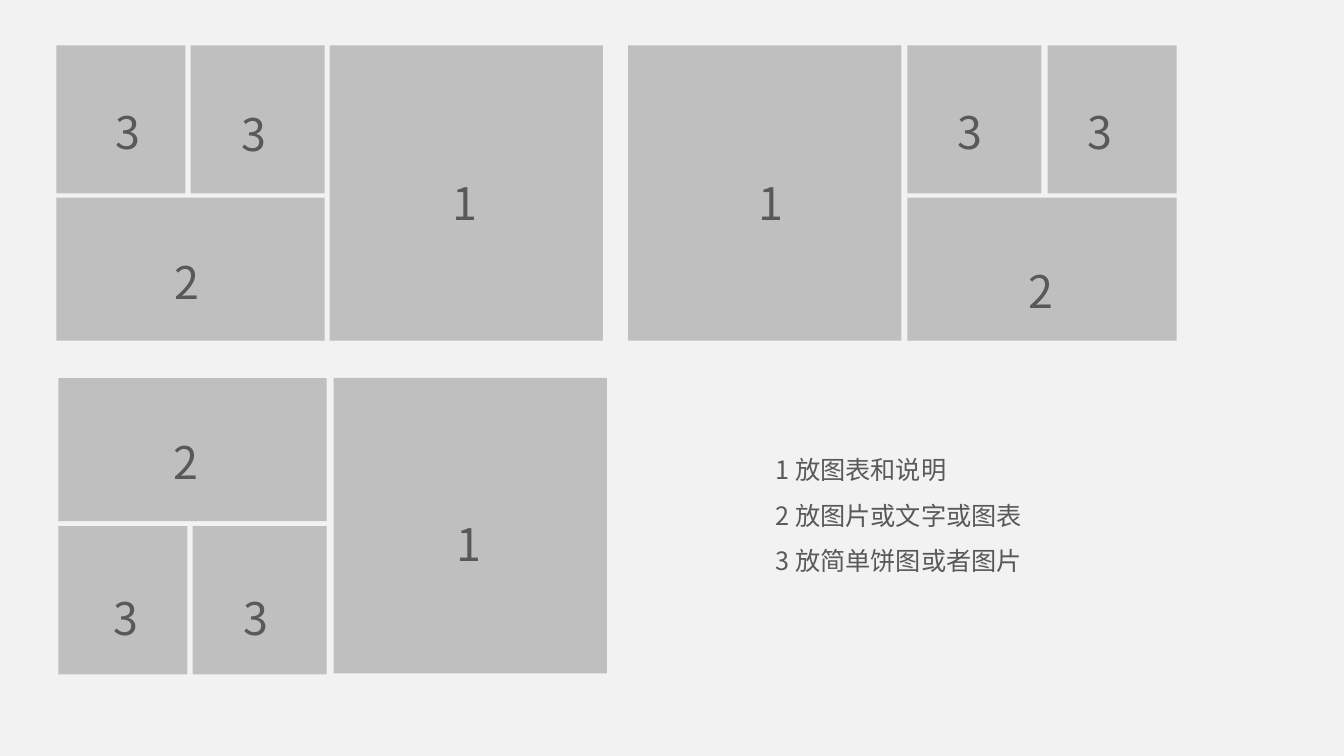
"""Build a slide showing three tile layouts and a legend for their numbers."""
import pptx
import pptx.dml.color
import pptx.enum.text
import pptx.oxml.ns
import pptx.util
from lxml import etree

PX = 9144
SLIDE_SIZE = (1333, 750)
FONT = "Noto Sans CJK SC"
BACKGROUND, TILE_FILL, TEXT_COLOUR = "F2F2F2", "BFBFBF", "595959"

BIG_WIDTH, BIG_HEIGHT = 271, 293
WIDE_HEIGHT, SMALL_HEIGHT = 142, 147
MIDDLE_WIDTH, SMALL_WIDTH = 133, 128
NUMBER_SIZE = (48, 81)

PANELS = [
    {"left": 56, "top": 45, "column_gap": 5, "small_gap": 5, "row_gap": 4,
     "big_first": False, "wide_first": False,
     "numbers": [("1", 439, 143), ("2", 163, 221), ("3", 230, 74), ("3", 105, 72)]},
    {"left": 58, "top": 375, "column_gap": 7, "small_gap": 5, "row_gap": 5,
     "big_first": False, "wide_first": True,
     "numbers": [("1", 443, 481), ("2", 162, 400), ("3", 232, 554), ("3", 103, 554)]},
    {"left": 623, "top": 45, "column_gap": 6, "small_gap": 6, "row_gap": 4,
     "big_first": True, "wide_first": False,
     "numbers": [("1", 742, 143), ("2", 1010, 230), ("3", 940, 72), ("3", 1069, 72)]},
]
LEGEND_BOX = (759, 431, 357, 146)
LEGEND = ["1 放图表和说明", "2 放图片或文字或图表", "3 放简单饼图或者图片"]


def emu(lengths):
    return [length * PX for length in lengths]


def colour(code):
    return pptx.dml.color.RGBColor.from_string(code)


def panel_tiles(panel):
    small_gap = panel["small_gap"]
    wide_width = MIDDLE_WIDTH + small_gap + SMALL_WIDTH
    big_left = wide_left = panel["left"]
    wide_top = small_top = panel["top"]
    if panel["big_first"]:
        wide_left += BIG_WIDTH + panel["column_gap"]
        middle_left = wide_left
        small_left = wide_left + MIDDLE_WIDTH + small_gap
    else:
        big_left += wide_width + panel["column_gap"]
        small_left = wide_left
        middle_left = wide_left + SMALL_WIDTH + small_gap
    if panel["wide_first"]:
        small_top += WIDE_HEIGHT + panel["row_gap"]
    else:
        wide_top += SMALL_HEIGHT + panel["row_gap"]
    return [
        (big_left, panel["top"], BIG_WIDTH, BIG_HEIGHT),
        (wide_left, wide_top, wide_width, WIDE_HEIGHT),
        (middle_left, small_top, MIDDLE_WIDTH, SMALL_HEIGHT),
        (small_left, small_top, SMALL_WIDTH, SMALL_HEIGHT),
    ]


def add_tile(group, bounds):
    tile = group.shapes.add_shape(pptx.enum.shapes.MSO_SHAPE.RECTANGLE, *emu(bounds))
    tile.shadow.inherit = False
    tile.fill.solid()
    tile.fill.fore_color.rgb = colour(TILE_FILL)
    tile.line.fill.background()


def write_lines(box, lines, size):
    frame = box.text_frame
    frame.text = "\n".join(lines)
    frame.word_wrap = True
    frame.auto_size = pptx.enum.text.MSO_AUTO_SIZE.SHAPE_TO_FIT_TEXT
    for para in frame.paragraphs:
        para.line_spacing = 1.5
        para.space_before = pptx.util.Pt(0)
        for span in para.runs:
            span.font.size = pptx.util.Pt(size)
            span.font.name = FONT
            span.font.color.rgb = colour(TEXT_COLOUR)
            east_asian = etree.SubElement(span.font._element, pptx.oxml.ns.qn("a:ea"))
            east_asian.set("typeface", FONT)


def add_legend(page):
    legend = page.placeholders[1]
    legend.left, legend.top, legend.width, legend.height = emu(LEGEND_BOX)
    write_lines(legend, LEGEND, 18)
    for para in legend.text_frame.paragraphs:
        properties = para._p.get_or_add_pPr()
        properties.set("marL", "0")
        properties.set("indent", "0")
        etree.SubElement(properties, pptx.oxml.ns.qn("a:buNone"))


def main():
    deck = pptx.Presentation()
    deck.slide_width, deck.slide_height = emu(SLIDE_SIZE)
    page = deck.slides.add_slide(deck.slide_layouts[1])
    page.background.fill.solid()
    page.background.fill.fore_color.rgb = colour(BACKGROUND)
    title = page.shapes.title._element
    title.getparent().remove(title)

    for panel in PANELS:
        group = page.shapes.add_group_shape()
        for bounds in panel_tiles(panel):
            add_tile(group, bounds)
        for number, left, top in panel["numbers"]:
            box = page.shapes.add_textbox(*emu((left, top, *NUMBER_SIZE)))
            write_lines(box, [number], 32)
    add_legend(page)
    deck.save("out.pptx")


if __name__ == "__main__":
    main()
